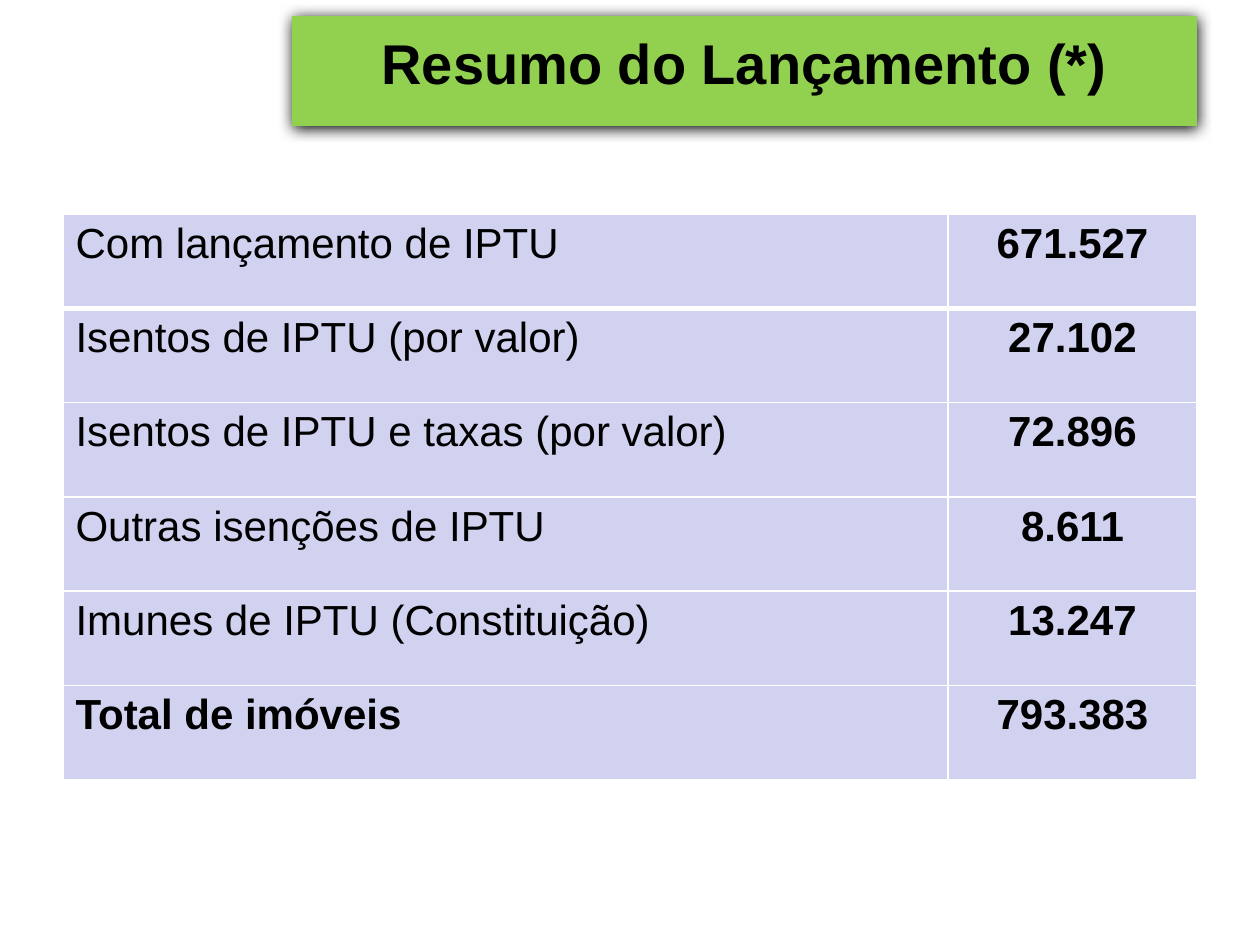
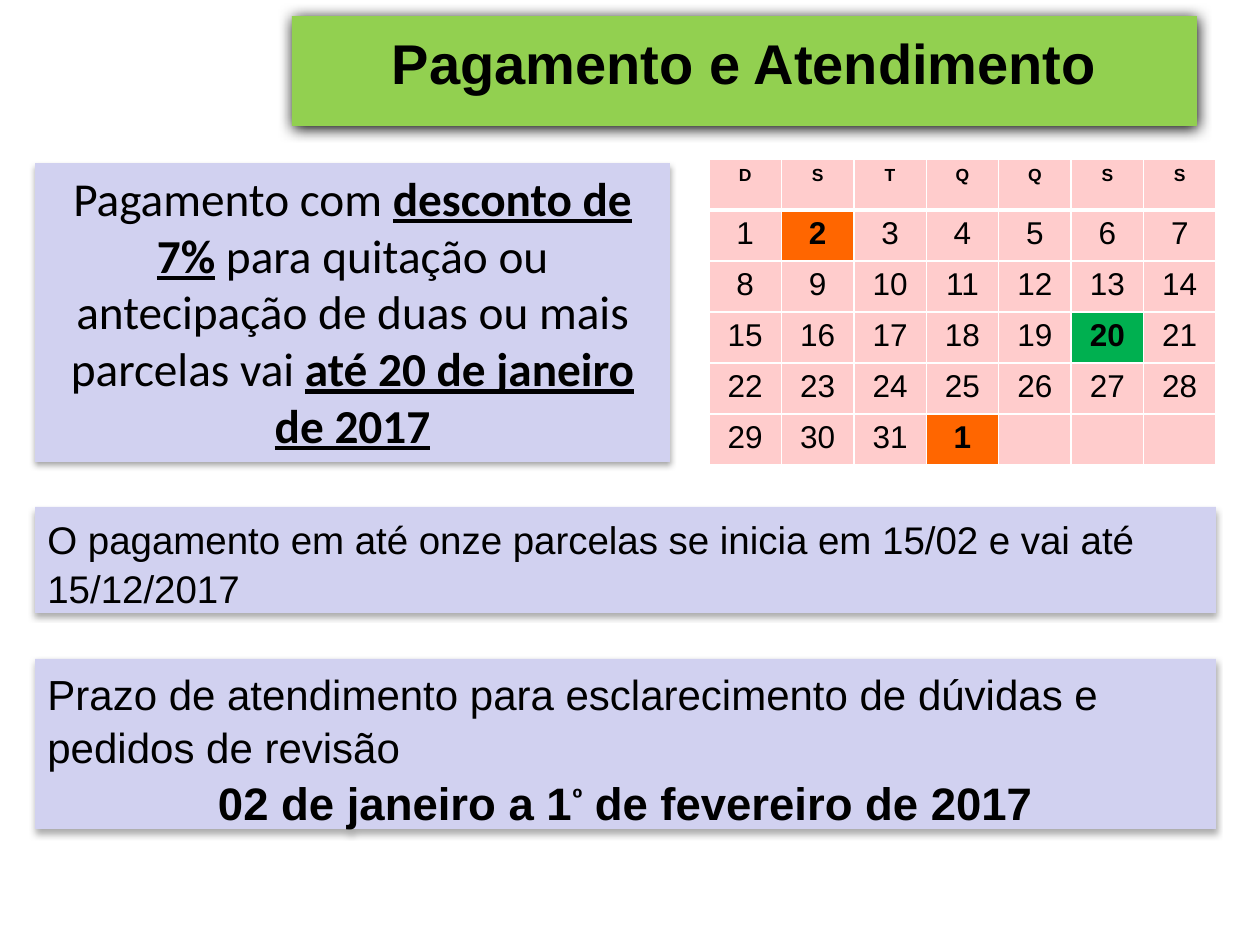
from lxml.etree import SubElement
from pptx import Presentation
from pptx.dml.color import RGBColor
from pptx.enum.shapes import MSO_SHAPE
from pptx.enum.text import MSO_ANCHOR, MSO_AUTO_SIZE, PP_ALIGN
from pptx.oxml.ns import qn
from pptx.util import Inches, Pt

PX = Inches(10) // 1260
LEFT, CENTER = PP_ALIGN.LEFT, PP_ALIGN.CENTER
BLACK, WHITE, GREEN, LILAC = "000000", "FFFFFF", "92D050", "D1D1F0"
PINK, ORANGE, DARK_GREEN = "FFCCCC", "FF6600", "00B050"

# Shadow: opacity in percent, blur and distance in points
TITLE_SHADOW = (100, 8.5, 1)
BOX_SHADOW = (32, 3.5, 2.2)


def write(tf, paragraphs, spacing=1.0):
    """Fill a text frame from (alignment, [(text, font values), ...]) pairs."""
    for i, (align, runs) in enumerate(paragraphs):
        p = tf.add_paragraph() if i else tf.paragraphs[0]
        p.alignment = align
        p.line_spacing = spacing
        for text, fmt in runs:
            r = p.add_run()
            r.text = text
            r.font.color.rgb = RGBColor.from_string(BLACK)
            for name, value in {"name": "Arial", "bold": False, **fmt}.items():
                setattr(r.font, name, value)


def add_box(slide, box, fill, shadow, paragraphs, spacing=1.0):
    """Add a filled rectangle with a downward shadow and top-aligned text."""
    sp = slide.shapes.add_shape(MSO_SHAPE.RECTANGLE, *[v * PX for v in box])
    sp.fill.solid()
    sp.fill.fore_color.rgb = RGBColor.from_string(fill)
    sp.line.fill.background()
    sp.shadow.inherit = False
    opacity, blur, dist = shadow
    effects = sp.element.spPr.find(qn("a:effectLst"))
    outer = SubElement(effects, qn("a:outerShdw"), blurRad=str(Pt(blur)),
                       dist=str(Pt(dist)), dir="5400000", rotWithShape="0")
    clr = SubElement(outer, qn("a:srgbClr"), val=BLACK)
    SubElement(clr, qn("a:alpha"), val=str(opacity * 1000))
    tf = sp.text_frame
    tf.word_wrap = True
    tf.vertical_anchor = MSO_ANCHOR.TOP
    write(tf, paragraphs, spacing)
    return sp


prs = Presentation()
prs.slide_width, prs.slide_height = Inches(10), Inches(7.5)

# Slides and their title bands
slides = []
for title in ("Resumo do Lançamento (*)", "Pagamento e Atendimento"):
    slide = prs.slides.add_slide(prs.slide_layouts[6])
    heading = [(CENTER, [(title, {"size": Pt(32), "bold": True})])]
    add_box(slide, (292, 16, 905, 110), GREEN, TITLE_SHADOW, heading, 1.1)
    slides.append(slide)
summary, payment = slides

# Table contents: each cell is (text, alignment, size, bold, fill)
totals = [
    ("Com lançamento de IPTU", "671.527"),
    ("Isentos de IPTU (por valor)", "27.102"),
    ("Isentos de IPTU e taxas (por valor)", "72.896"),
    ("Outras isenções de IPTU", "8.611"),
    ("Imunes de IPTU (Constituição)", "13.247"),
    ("Total de imóveis", "793.383"),
]
total_rows = [[(label, LEFT, 24, label.startswith("Total"), LILAC),
               (value, CENTER, 24, True, LILAC)] for label, value in totals]

marked_days = {2: ORANGE, 20: DARK_GREEN, 32: ORANGE}
calendar_rows = [[(day, CENTER, 10, True, PINK) for day in "DSTQQSS"]]
for first in range(1, 36, 7):
    week = []
    for day in range(first, first + 7):
        text = str(day) if day <= 31 else "1" if day == 32 else ""
        week.append((text, CENTER, 18, day in marked_days, marked_days.get(day, PINK)))
    calendar_rows.append(week)

tables = [
    (summary, (63, 214, 1134, 566), total_rows, (885, 249)),
    (payment, (709, 159, 507, 306), calendar_rows, ()),
]
for slide, box, rows, widths in tables:
    frame = slide.shapes.add_table(len(rows), len(rows[0]), *[v * PX for v in box])
    table = frame.table
    table.first_row = table.horz_banding = False
    for column, width in zip(table.columns, widths):
        column.width = width * PX
    for i, row in enumerate(rows):
        borders = {"L": 1, "R": 1, "T": 3 if i == 1 else 1, "B": 3 if i == 0 else 1}
        for j, (text, align, size, bold, fill) in enumerate(row):
            cell = table.cell(i, j)
            tcPr = cell._tc.get_or_add_tcPr()
            for side, weight in borders.items():
                ln = SubElement(tcPr, qn(f"a:ln{side}"), w=str(Pt(weight)))
                solid = SubElement(ln, qn("a:solidFill"))
                SubElement(solid, qn("a:srgbClr"), val=WHITE)
            cell.fill.solid()
            cell.fill.fore_color.rgb = RGBColor.from_string(fill)
            if text:
                fmt = {"size": Pt(size), "bold": bold}
                write(cell.text_frame, [(align, [(text, fmt)])])

# Payment notices
discount = {"name": "Calibri", "size": Pt(27)}
stressed = {**discount, "bold": True, "underline": True}
notice = {"size": Pt(24)}
period = {"size": Pt(26), "bold": True}
notices = [
    ((35, 163, 635, 299), 1.0, [(CENTER, [
        ("Pagamento com ", discount),
        ("desconto de 7%", stressed),
        (" para quitação ou antecipação de duas ou mais parcelas vai ", discount),
        ("até 20 de janeiro de 2017", stressed)])]),
    ((35, 507, 1181, 106), 1.06, [(LEFT, [
        ("O pagamento em até onze parcelas se inicia em 15/02 e vai até 15/12/2017",
         {"size": Pt(22)})])]),
    ((35, 659, 1181, 170), 1.06, [
        (LEFT, [("Prazo de atendimento para esclarecimento de dúvidas e "
                 "pedidos de revisão", notice)]),
        (CENTER, [("02 de janeiro a 1", period), ("º", period),
                  (" de fevereiro de 2017", period)])]),
]
for box, spacing, paragraphs in notices:
    sp = add_box(payment, box, LILAC, BOX_SHADOW, paragraphs, spacing)
    sp.text_frame.auto_size = MSO_AUTO_SIZE.SHAPE_TO_FIT_TEXT
ordinal = sp.text_frame.paragraphs[1].runs[1]
ordinal.font._element.set("baseline", "30000")

prs.save("out.pptx")
